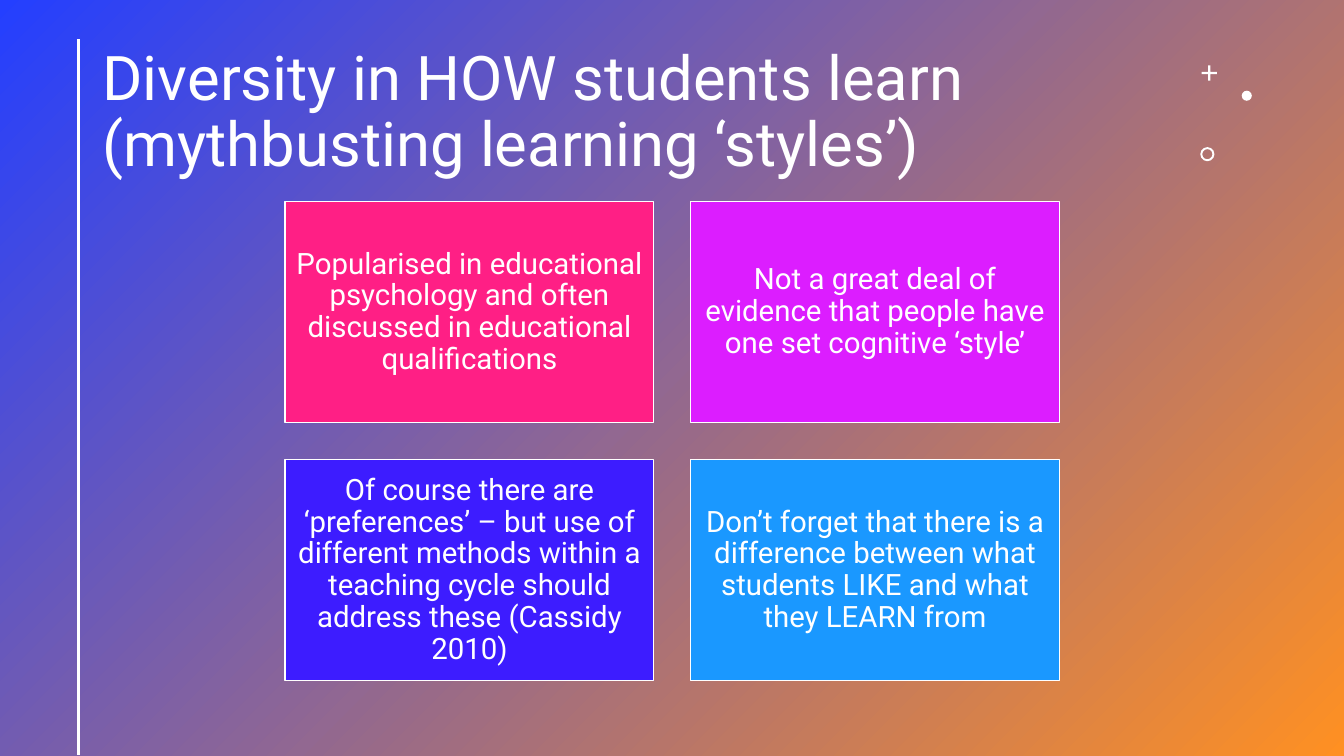
from dataclasses import dataclass

from lxml import etree
from pptx import Presentation
from pptx.dml import color
from pptx.enum import shapes, text
from pptx.oxml import ns
from pptx.util import Pt

SLIDE_WIDTH, SLIDE_HEIGHT = 960, 540
WHITE = "FFFFFF"
FONT = "Roboto"

CARD_LEFT, CARD_TOP, CARD_WIDTH = 203.7, 144, 263.3
CARD_HEIGHT = CARD_WIDTH * 0.6
CARD_GAP = CARD_WIDTH * 0.1
CARD_COLUMNS = 2


@dataclass
class Card:
    message: str
    fill: str


@dataclass
class Ornament:
    kind: shapes.MSO_SHAPE
    left: float
    top: float
    size: float
    adjustment: float | None = None


CARDS = [
    Card("Popularised in educational psychology and often discussed in "
         "educational qualifications", "FF1F85"),
    Card("Not a great deal of evidence that people have one set cognitive "
         "‘style’", "DC1DFF"),
    Card("Of course there are ‘preferences’ – but use of different methods "
         "within a teaching cycle should address these (Cassidy 2010)", "3D1CFF"),
    Card("Don’t forget that there is a difference between what students LIKE "
         "and what they LEARN from", "1A98FF"),
]

ORNAMENTS = [
    Ornament(shapes.MSO_SHAPE.CROSS, 858.3, 46.7, 11, 0.43),
    Ornament(shapes.MSO_SHAPE.OVAL, 887, 64.8, 7.2),
    Ornament(shapes.MSO_SHAPE.DONUT, 857.4, 105.1, 10.1, 0.14),
]


def rgb(hex_code: str) -> color.RGBColor:
    return color.RGBColor.from_string(hex_code)


def add_block(slide, kind, left: float, top: float, width: float, height: float,
              fill: str | None = None, outline: str | None = None):
    """Add a shadowless preset shape; without a fill colour it keeps its own fill."""
    block = slide.shapes.add_shape(kind, Pt(left), Pt(top), Pt(width), Pt(height))
    block.shadow.inherit = False
    if fill:
        block.fill.solid()
        block.fill.fore_color.rgb = rgb(fill)
    if outline:
        block.line.color.rgb = rgb(outline)
        block.line.width = Pt(1)
    else:
        block.line.fill.background()
    return block


def write(frame, wording: str, *, size: float, align: text.PP_ALIGN,
          inset_x: float, inset_y: float) -> None:
    frame.word_wrap = True
    frame.vertical_anchor = text.MSO_ANCHOR.MIDDLE
    frame.margin_left = frame.margin_right = Pt(inset_x)
    frame.margin_top = frame.margin_bottom = Pt(inset_y)
    paragraph = frame.paragraphs[0]
    paragraph.alignment = align
    paragraph.line_spacing = 0.9
    run = paragraph.add_run()
    run.text = wording
    run.font.name = FONT
    run.font.size = Pt(size)
    run.font.color.rgb = rgb(WHITE)


def add_background(slide) -> None:
    backdrop = add_block(slide, shapes.MSO_SHAPE.RECTANGLE,
                         0, 0, SLIDE_WIDTH, SLIDE_HEIGHT)
    backdrop.fill.gradient()
    backdrop.fill.gradient_angle = 315
    for stop, (position, hue) in zip(backdrop.fill.gradient_stops,
                                     [(0, "243FFF"), (1, "FF9022")]):
        stop.position = position
        stop.color.rgb = rgb(hue)


def add_title(slide) -> None:
    title = slide.shapes.add_textbox(Pt(66.2), Pt(28.8), Pt(771.8), Pt(104.4))
    write(title.text_frame,
          "Diversity in HOW students learn (mythbusting learning ‘styles’)",
          size=44, align=text.PP_ALIGN.LEFT, inset_x=7.2, inset_y=3.6)


def add_side_rule(slide) -> None:
    rule = slide.shapes.add_connector(shapes.MSO_CONNECTOR.STRAIGHT,
                                      Pt(56.2), Pt(28), Pt(56.2), Pt(539.5))
    rule.line.color.rgb = rgb(WHITE)
    rule.line.width = Pt(2)
    etree.SubElement(rule._element.spPr, ns.qn("a:effectLst"))


def add_ornament(slide, ornament: Ornament) -> None:
    mark = add_block(slide, ornament.kind, ornament.left, ornament.top,
                     ornament.size, ornament.size, WHITE)
    if ornament.adjustment is not None:
        mark.adjustments[0] = ornament.adjustment


def add_card(slide, index: int, card: Card) -> None:
    row, column = divmod(index, CARD_COLUMNS)
    panel = add_block(slide, shapes.MSO_SHAPE.RECTANGLE,
                      CARD_LEFT + column * (CARD_WIDTH + CARD_GAP),
                      CARD_TOP + row * (CARD_HEIGHT + CARD_GAP),
                      CARD_WIDTH, CARD_HEIGHT, card.fill, WHITE)
    write(panel.text_frame, card.message, size=21,
          align=text.PP_ALIGN.CENTER, inset_x=6.3, inset_y=6.3)


def main() -> None:
    deck = Presentation()
    deck.slide_width, deck.slide_height = Pt(SLIDE_WIDTH), Pt(SLIDE_HEIGHT)
    slide = deck.slides.add_slide(deck.slide_layouts[6])
    add_background(slide)
    add_title(slide)
    add_side_rule(slide)
    for ornament in ORNAMENTS:
        add_ornament(slide, ornament)
    for index, card in enumerate(CARDS):
        add_card(slide, index, card)
    deck.save("out.pptx")


if __name__ == "__main__":
    main()
